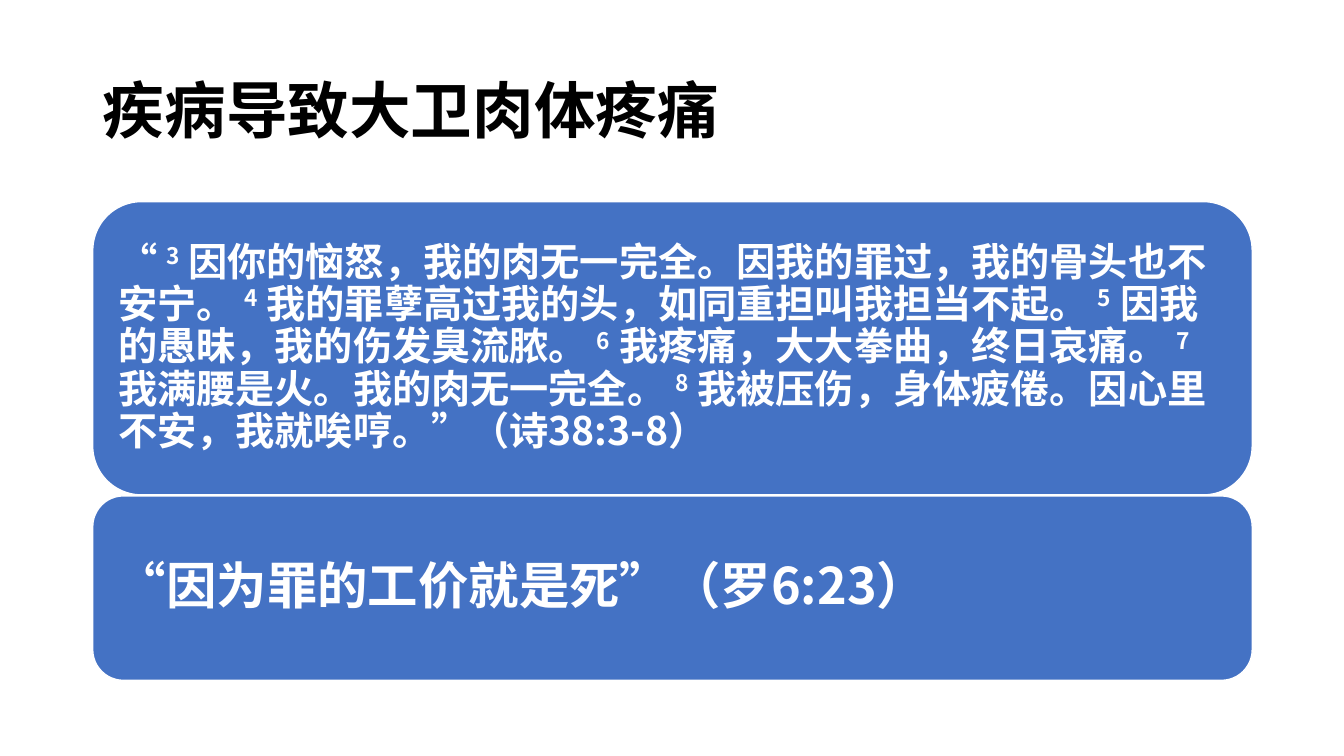
from dataclasses import dataclass

from pptx import Presentation
from pptx import util as u
from pptx.dml.color import RGBColor
from pptx.enum import lang, shapes, text
from pptx.oxml import ns
from lxml import etree

FONT = "Noto Sans CJK SC"
BLACK = RGBColor(0x00, 0x00, 0x00)
WHITE = RGBColor(0xFF, 0xFF, 0xFF)
BLUE = RGBColor(0x44, 0x72, 0xC4)
LEFT, WIDTH = 0.92, 11.5
VERSE_MARK = "^"


@dataclass
class Quote:
    top: float
    height: float
    inset: float
    size: int
    space_after: float
    words: str


QUOTES = [
    Quote(2, 2.91, 0.11, 28, 9.8,
          "“ ^3^ 因你的恼怒，我的肉无一完全。因我的罪过，我的骨头也不安宁。 "
          "^4^ 我的罪孽高过我的头，如同重担叫我担当不起。 "
          "^5^ 因我的愚昧，我的伤发臭流脓。 "
          "^6^ 我疼痛，大大拳曲，终日哀痛。 "
          "^7^ 我满腰是火。我的肉无一完全。 "
          "^8^ 我被压伤，身体疲倦。因心里不安，我就唉哼。”（诗38:3-8）"),
    Quote(4.92, 1.83, 0.14, 36, 12.6, "“因为罪的工价就是死”（罗6:23）"),
]


def format_run(r, size: int, color: RGBColor) -> None:
    r.font.size = u.Pt(size)
    r.font.bold = True
    r.font.color.rgb = color
    r.font.name = FONT
    r.font.language_id = lang.MSO_LANGUAGE_ID.SIMPLIFIED_CHINESE
    ea = etree.SubElement(r.font._element, ns.qn("a:ea"))
    ea.set("typeface", FONT)


def add_title(slide, words: str) -> None:
    sp = slide.shapes.title
    sp.left, sp.top = u.Inches(LEFT), u.Inches(0.4)
    sp.width, sp.height = u.Inches(WIDTH), u.Inches(1.45)
    tf = sp.text_frame
    tf.text = words
    tf.vertical_anchor = text.MSO_ANCHOR.MIDDLE
    tf.auto_size = text.MSO_AUTO_SIZE.NONE
    p = tf.paragraphs[0]
    p.alignment = text.PP_ALIGN.LEFT
    p.line_spacing = 0.9
    format_run(p.runs[0], 44, BLACK)


def add_quote(slide, quote: Quote) -> None:
    sp = slide.shapes.add_shape(
        shapes.MSO_SHAPE.ROUNDED_RECTANGLE, u.Inches(LEFT), u.Inches(quote.top),
        u.Inches(WIDTH), u.Inches(quote.height))
    sp.shadow.inherit = False
    sp.fill.solid()
    sp.fill.fore_color.rgb = BLUE
    sp.line.color.rgb = WHITE
    sp.line.width = u.Pt(1)
    tf = sp.text_frame
    tf.word_wrap = True
    tf.vertical_anchor = text.MSO_ANCHOR.MIDDLE
    tf.margin_left = tf.margin_right = u.Inches(quote.inset)
    tf.margin_top = tf.margin_bottom = u.Inches(quote.inset)
    p = tf.paragraphs[0]
    p.alignment = text.PP_ALIGN.LEFT
    p.line_spacing = 0.9
    p.space_after = u.Pt(quote.space_after)
    for i, part in enumerate(quote.words.split(VERSE_MARK)):
        r = p.add_run()
        r.text = part
        format_run(r, quote.size, WHITE)
        if i % 2:
            r.font._element.set("baseline", "30000")


def main() -> None:
    prs = Presentation()
    prs.slide_width, prs.slide_height = u.Inches(13.33), u.Inches(7.5)
    slide = prs.slides.add_slide(prs.slide_layouts.get_by_name("Title Only"))
    add_title(slide, "疾病导致大卫肉体疼痛")
    for quote in QUOTES:
        add_quote(slide, quote)
    prs.save("out.pptx")


if __name__ == "__main__":
    main()
